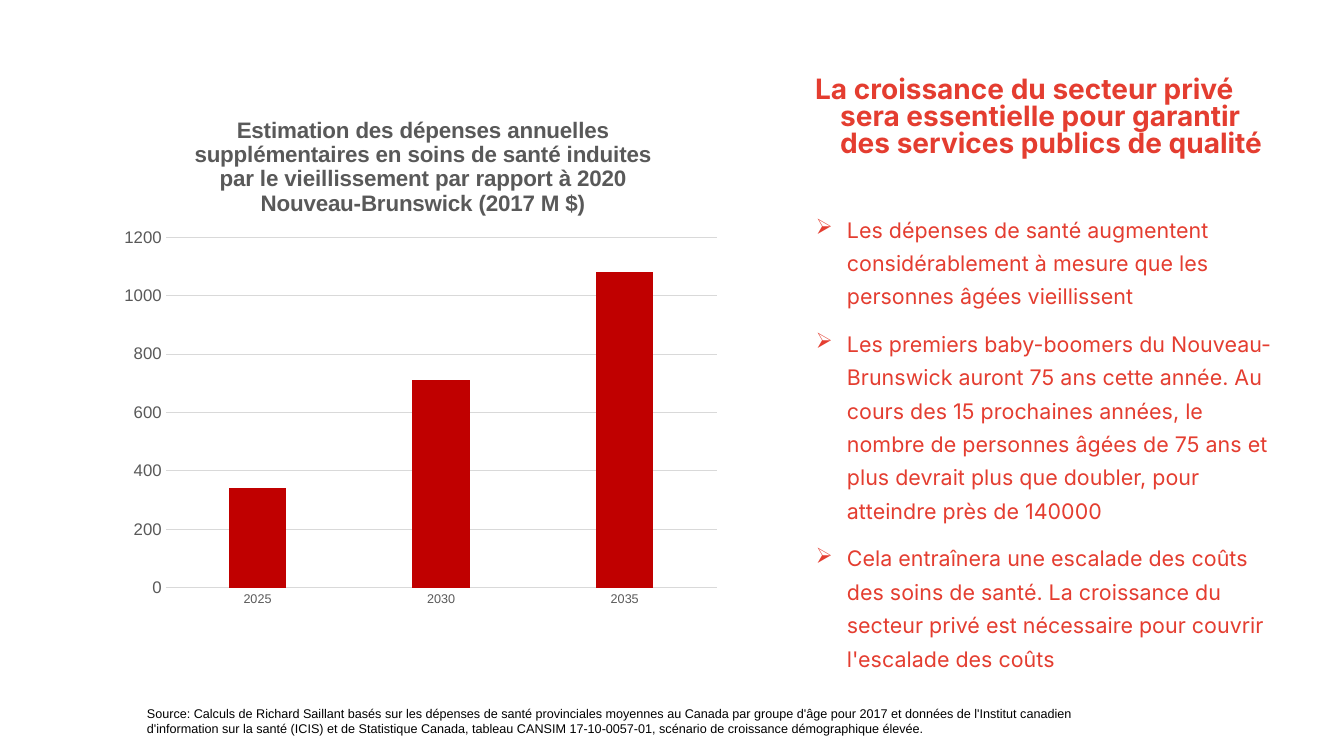
from lxml import etree
from pptx import Presentation
from pptx.chart.data import CategoryChartData
from pptx.dml.color import RGBColor
from pptx.enum.chart import XL_CHART_TYPE, XL_TICK_MARK
from pptx.enum.text import MSO_ANCHOR, MSO_AUTO_SIZE, PP_ALIGN
from pptx.oxml import parse_xml
from pptx.oxml.ns import nsdecls, qn
from pptx.util import Pt

COLUMN = XL_CHART_TYPE.COLUMN_CLUSTERED
NO_TICK = XL_TICK_MARK.NONE
TOP, LEFT = MSO_ANCHOR.TOP, PP_ALIGN.LEFT
NO_AUTOFIT = MSO_AUTO_SIZE.NONE

EMU_PER_PX = 914400 / 100.8
THEME = {
    "heading_font": "Inter", "chart_font": "Arial",
    "accent": RGBColor(0xE4, 0x3D, 0x30), "bar": RGBColor(0xC0, 0, 0),
    "grey": RGBColor(0x59, 0x59, 0x59), "grid": RGBColor(0xD9, 0xD9, 0xD9),
    "black": RGBColor(0, 0, 0),
    "title": 20, "body": 15.3, "chart_title": 16, "values": 12, "small": 9,
}


def px(*lengths):
    return [round(length * EMU_PER_PX) for length in lengths]


def style(font, name, size, color, bold=False):
    font.name = THEME[name]
    font.size = Pt(THEME[size])
    font.color.rgb = THEME[color]
    font.bold = bold


presentation = Presentation()
presentation.slide_width, presentation.slide_height = px(1344, 756)
slide = presentation.slides.add_slide(presentation.slide_layouts[5])

# Title
title = slide.shapes.title
title.left, title.top, title.width, title.height = px(780, 73, 513, 131)
title.text_frame.text = ("La croissance du secteur privé sera essentielle pour garantir "
                         "des services publics de qualité")
title.text_frame.vertical_anchor = TOP
title.text_frame.auto_size = NO_AUTOFIT
paragraph = title.text_frame.paragraphs[0]
paragraph.alignment = LEFT
paragraph.line_spacing = 0.8
properties = paragraph._p.get_or_add_pPr()
margin, hanging = px(50, -25)
properties.set("marL", str(margin))
properties.set("indent", str(hanging))
style(paragraph.runs[0].font, "heading_font", "title", "accent", True)

# Bulleted arguments
arguments = [
    "Les dépenses de santé augmentent considérablement à mesure que les personnes âgées "
    "vieillissent",
    "Les premiers baby-boomers du Nouveau-Brunswick auront 75 ans cette année. Au cours des "
    "15 prochaines années, le nombre de personnes âgées de 75 ans et plus devrait plus que "
    "doubler, pour atteindre près de 140000",
    "Cela entraînera une escalade des coûts des soins de santé. La croissance du secteur privé "
    "est nécessaire pour couvrir l'escalade des coûts",
]
text_frame = slide.shapes.add_textbox(*px(780, 204, 513, 481)).text_frame
text_frame.word_wrap = True
margin, hanging = px(57, -31)
for index, argument in enumerate(arguments):
    paragraph = text_frame.paragraphs[0] if index == 0 else text_frame.add_paragraph()
    paragraph.text = argument
    paragraph.line_spacing = 1.3
    if index:
        paragraph.space_before = Pt(10)
    properties = paragraph._p.get_or_add_pPr()
    properties.set("marL", str(margin))
    properties.set("indent", str(hanging))
    bullet_color = etree.SubElement(properties, qn("a:buClr"))
    etree.SubElement(bullet_color, qn("a:srgbClr"), val=str(THEME["accent"]))
    etree.SubElement(properties, qn("a:buChar"), char="➢")
    style(paragraph.runs[0].font, "heading_font", "body", "accent")

# Column chart
chart_data = CategoryChartData(number_format="0")
chart_data.categories = ["2025", "2030", "2035"]
chart_data.add_series("Series 1", [340, 710, 1080])
chart = slide.shapes.add_chart(COLUMN, *px(110, 91, 619, 523), chart_data).chart
chart.has_legend = False
style(chart.font, "chart_font", "small", "grey")

chart.has_title = True
chart_title = chart.chart_title
chart_title.text_frame.text = (
    "Estimation des dépenses annuelles supplémentaires en soins de santé induites par le "
    "vieillissement par rapport à 2020 Nouveau-Brunswick (2017 M $)")
style(chart_title.text_frame.paragraphs[0].runs[0].font,
      "chart_font", "chart_title", "grey", True)
chart_title.include_in_layout = False

plot = chart.plots[0]
plot.gap_width, plot.overlap = 219, -27
plot.vary_by_categories = False
fill = plot.series[0].format.fill
fill.solid()
fill.fore_color.rgb = THEME["bar"]

# Axes and gridlines
value_axis, category_axis = chart.value_axis, chart.category_axis
value_axis.minimum_scale, value_axis.maximum_scale, value_axis.major_unit = 0, 1200, 200
value_axis.tick_labels.number_format = "0"
value_axis.tick_labels.number_format_is_linked = False
value_axis.format.line.fill.background()
for axis, size in ((value_axis, "values"), (category_axis, "small")):
    axis.major_tick_mark = axis.minor_tick_mark = NO_TICK
    style(axis.tick_labels.font, "chart_font", size, "grey")
for line in (value_axis.major_gridlines.format.line, category_axis.format.line):
    line.color.rgb = THEME["grid"]
    line.width = Pt(0.75)

# Fixed places of the chart title and the plot area
plot_area = chart._chartSpace.chart.plotArea
for old_layout in plot_area.findall(qn("c:layout")):
    plot_area.remove(old_layout)
title_element = chart_title._element
for old_layout in title_element.findall(qn("c:layout")):
    title_element.remove(old_layout)
plot_place = {"layoutTarget": "inner", "xMode": "edge", "yMode": "edge",
              "x": 0.09, "y": 0.28, "w": 0.89, "h": 0.67}
title_place = {"xMode": "edge", "yMode": "edge", "x": 0.13, "y": 0.04}
for parent, position, place in ((plot_area, 0, plot_place), (title_element, 1, title_place)):
    settings = "".join(f'<c:{key} val="{value}"/>' for key, value in place.items())
    parent.insert(position, parse_xml(
        f'<c:layout {nsdecls("c")}><c:manualLayout>{settings}</c:manualLayout></c:layout>'))

# Source note
text_frame = slide.shapes.add_textbox(*px(137, 701, 987, 40)).text_frame
text_frame.word_wrap = True
text_frame.text = (
    "Source: Calculs de Richard Saillant basés sur les dépenses de santé provinciales moyennes "
    "au Canada par groupe d'âge pour 2017 et données de l'Institut canadien d'information sur "
    "la santé (ICIS) et de Statistique Canada, tableau CANSIM 17-10-0057-01, scénario de "
    "croissance démographique élevée.")
style(text_frame.paragraphs[0].runs[0].font, "chart_font", "small", "black")

presentation.save("out.pptx")
